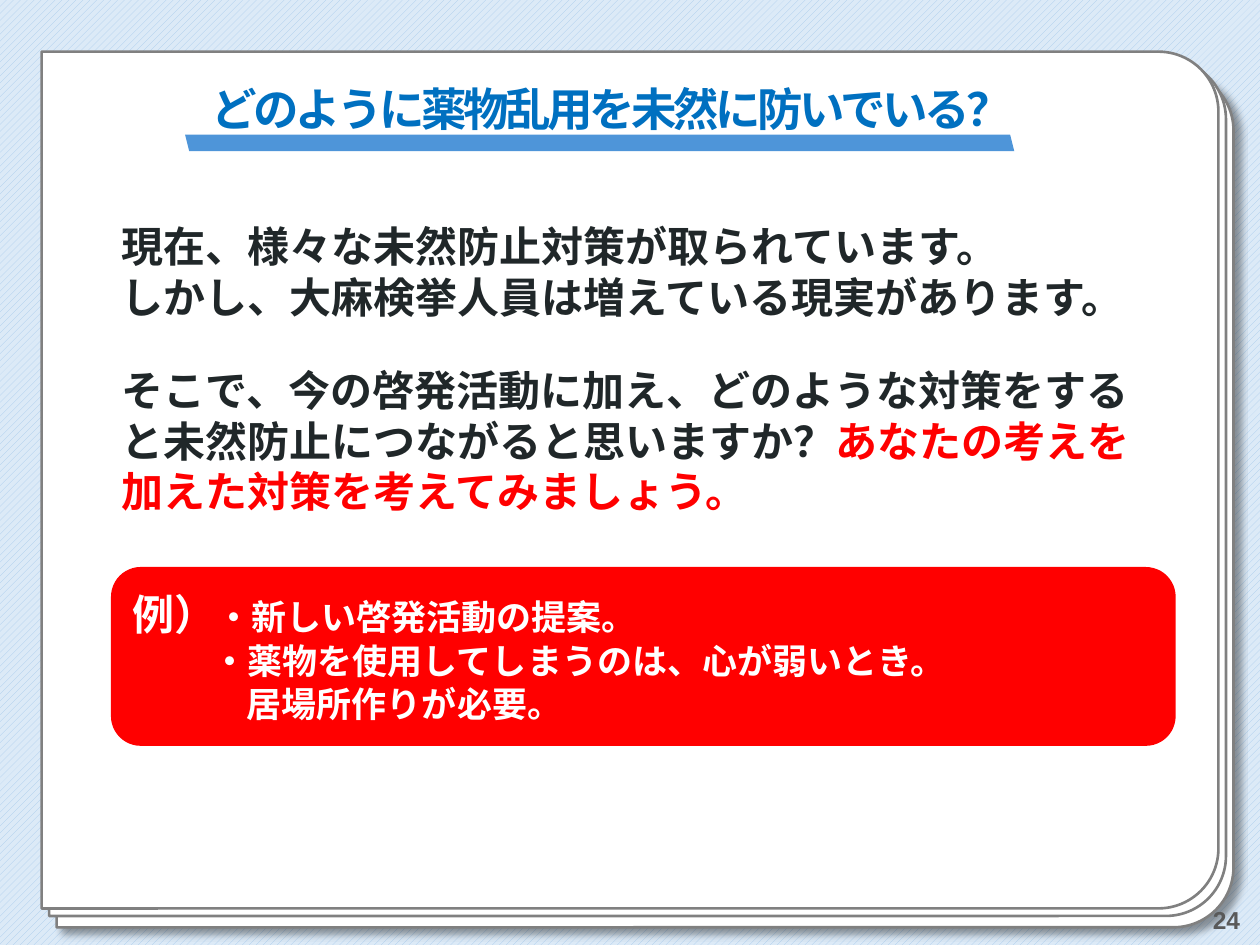
import pptx
import pptx.dml.color
import pptx.enum.dml
import pptx.enum.shapes
import pptx.enum.text
import pptx.oxml
import pptx.util
from lxml import etree

Pt = pptx.util.Pt
SHAPE = pptx.enum.shapes.MSO_SHAPE
ALIGN = pptx.enum.text.PP_ALIGN
MIDDLE = pptx.enum.text.MSO_ANCHOR.MIDDLE
NS = "http://schemas.openxmlformats.org/drawingml/2006/main"
JP = "Noto Sans CJK JP"


def rgb(value):
    return pptx.dml.color.RGBColor.from_string(value)


def add_text(p, text, size=24, color="202729", font="Arial", spacing=0):
    """Append a bold run to paragraph p, turning newlines into line breaks."""
    for i, line in enumerate(text.split("\n")):
        if i:
            p.add_line_break()
        r = p.add_run()
        r.text = line
        r.font.size = Pt(size)
        r.font.bold = True
        r.font.name = font
        r.font.color.rgb = rgb(color)
        rPr = r.font._element
        etree.SubElement(rPr, f"{{{NS}}}ea", typeface=JP)
        if spacing:
            rPr.set("spc", str(spacing * 100))


prs = pptx.Presentation()
prs.slide_width, prs.slide_height = Pt(720), Pt(540)
s = prs.slides.add_slide(prs.slide_layouts[6])

fill = s.background.fill
fill.patterned()
fill.pattern = pptx.enum.dml.MSO_PATTERN.WIDE_UPWARD_DIAGONAL
fill.fore_color.rgb = rgb("A6CAEC")
fill.back_color.rgb = rgb("DCEAF7")

# Stack of paper sheets, rear one first; only the rear one casts a shadow
for i, (x, y) in enumerate([(123.8, -51.1), (119.5, -57.6), (115.2, -61.9)]):
    sp = s.shapes.add_shape(SHAPE.ROUND_2_SAME_RECTANGLE, Pt(x), Pt(y), Pt(489.6), Pt(672.5))
    sp.rotation = 90
    sp.adjustments[0] = 0.07
    sp.adjustments[1] = 0
    sp.fill.solid()
    sp.fill.fore_color.rgb = rgb("FFFFFF")
    sp.line.color.rgb = rgb("808080")
    sp.line.width = Pt(1.5)
    sp.shadow.inherit = False
    if i == 0:
        effects = sp._element.spPr.find(f"{{{NS}}}effectLst")
        effects.append(pptx.oxml.parse_xml(
            f'<a:outerShdw xmlns:a="{NS}" blurRad="{Pt(4)}" dist="{Pt(5)}" dir="2700000" '
            'algn="tl" rotWithShape="0"><a:srgbClr val="000000"><a:alpha val="40000"/>'
            '</a:srgbClr></a:outerShdw>'))

# Page number
tf = s.shapes.add_textbox(Pt(553.7), Pt(511.2), Pt(162), Pt(28.8)).text_frame
tf.word_wrap = True
tf.vertical_anchor = MIDDLE
p = tf.paragraphs[0]
p.alignment = ALIGN.RIGHT
add_text(p, "24", size=14, color="595959")

# Title
tf = s.shapes.add_textbox(Pt(49), Pt(25.2), Pt(601.2), Pt(77.8)).text_frame
tf.word_wrap = True
tf.vertical_anchor = MIDDLE
p = tf.paragraphs[0]
p.alignment = ALIGN.CENTER
p.line_spacing = 0.9
add_text(p, "どのように薬物乱用を未然に防いでいる？", size=26, color="0070C0", font=JP, spacing=-2)

# Body
tf = s.shapes.add_textbox(Pt(62.6), Pt(118.8), Pt(608.4), Pt(208)).text_frame
tf.word_wrap = True
tf.margin_top = tf.margin_bottom = Pt(7.2)
body = [
    [("現在、様々な未然防止対策が取られています。\n"
      "しかし、大麻検挙人員は増えている現実があります。", "202729")],
    [("そこで、今の啓発活動に加え、どのような対策をすると未然防止につながると思いますか？", "202729"),
     ("あなたの考えを加えた対策を考えてみましょう。", "FF0000")],
]
for i, runs in enumerate(body):
    p = tf.add_paragraph() if i else tf.paragraphs[0]
    p.line_spacing = Pt(29)
    p.space_after = Pt(24)
    for text, color in runs:
        add_text(p, text, color=color)

# Example panel
sp = s.shapes.add_shape(SHAPE.ROUNDED_RECTANGLE, Pt(63.4), Pt(324), Pt(608.4), Pt(102.2))
sp.shadow.inherit = False
sp.fill.solid()
sp.fill.fore_color.rgb = rgb("FF0000")
sp.line.fill.background()
tf = sp.text_frame
tf.word_wrap = True
tf.vertical_anchor = MIDDLE
tf.margin_top = tf.margin_bottom = Pt(7.2)
examples = [
    (0, 29, [("例）", 24), ("・新しい啓発活動の提案。", 20)]),
    (46, 24.5, [("・薬物を使用してしまうのは、心が弱いとき。", 20)]),
    (65.5, 24.5, [("居場所作りが必要。", 20)]),
]
for i, (indent, pitch, runs) in enumerate(examples):
    p = tf.add_paragraph() if i else tf.paragraphs[0]
    p.alignment = ALIGN.LEFT
    p.line_spacing = Pt(pitch)
    p._p.get_or_add_pPr().set("marL", str(Pt(indent)))
    for text, size in runs:
        add_text(p, text, size=size, color="FFFFFF")

# Title underline
sp = s.shapes.add_shape(SHAPE.PARALLELOGRAM, Pt(105.8), Pt(77), Pt(473.8), Pt(9.4))
sp._element.spPr.xfrm.set("flipH", "1")
sp.shadow.inherit = False
sp.fill.solid()
sp.fill.fore_color.rgb = rgb("4E95D9")
sp.line.fill.background()

prs.save("out.pptx")
